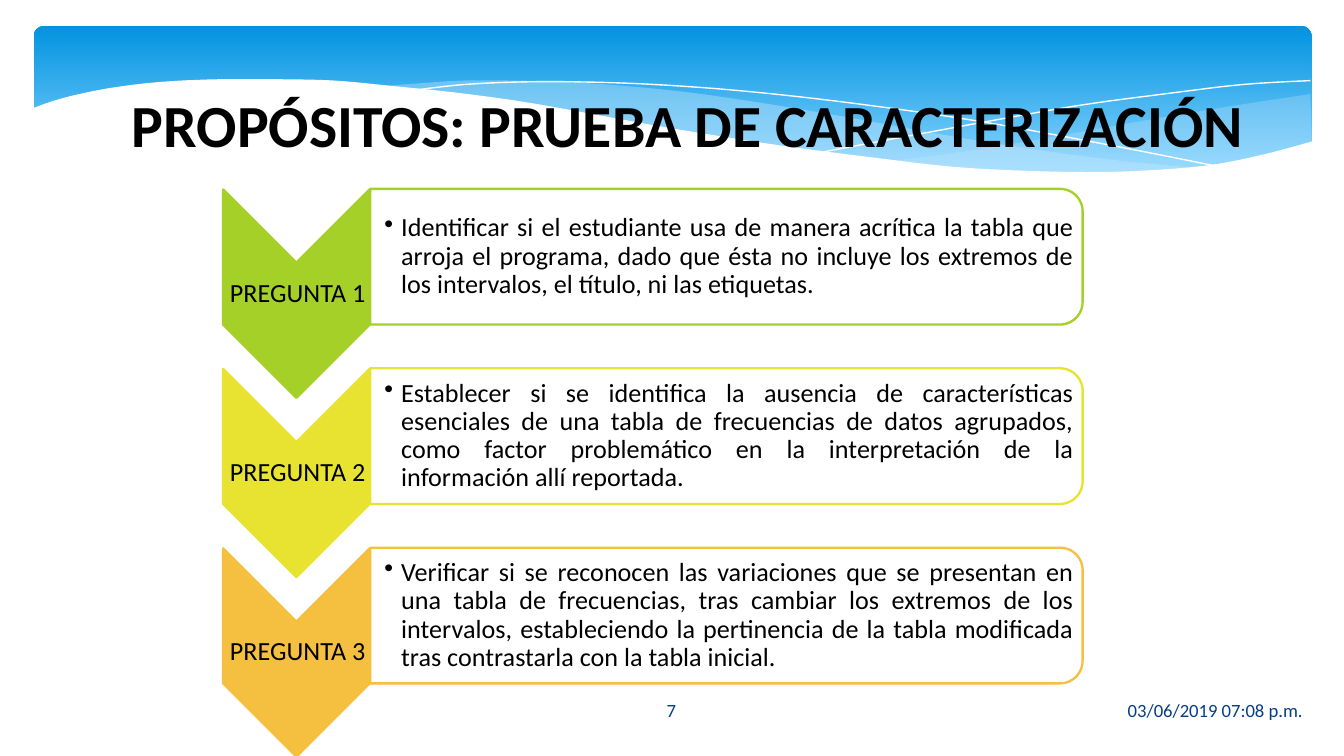
from dataclasses import dataclass
from typing import Optional

from lxml.etree import SubElement
from pptx import Presentation
from pptx.dml.color import RGBColor
from pptx.enum.shapes import MSO_SHAPE as Preset
from pptx.enum.text import MSO_ANCHOR as Anchor, MSO_AUTO_SIZE as AutoSize, PP_ALIGN as Align
from pptx.oxml.ns import qn
from pptx.util import Inches, Pt

WIDTH = Inches(10)
HEIGHT = WIDTH * 9 // 16
CELL = WIDTH // 1000  # the grid has 1000 columns of square cells
ROW_PITCH = 133.5
FONT = "Calibri"
COLORS = {
    "sky": "0293E0", "light sky": "83D3FE", "mist": "C6E7FC", "white": "FFFFFF",
    "black": "000000", "navy": "073E87",
    "green": "A5D028", "yellow": "E7E330", "orange": "F5C040",
}

Point = tuple[float, float]
Box = tuple[float, float, float, float]


@dataclass
class Wave:
    edges: list[list[Point]]
    fill: Optional[str] = None
    opacity: int = 100


@dataclass
class Question:
    label: str
    purpose: str
    color: str


WAVES = [
    Wave([[(975, 70), (935, 76), (891, 83), (861, 88), (805, 98), (729, 111), (661, 120)],
          [(661, 120), (705, 124), (757, 127), (803, 129), (844, 129), (881, 126),
           (921, 120), (949, 114), (976, 106)]], "mist", 29),
    Wave([[(893, 125), (837, 120), (775, 112), (706, 101), (629, 87), (569, 77), (514, 69),
           (465, 64), (420, 61), (380, 60), (344, 60), (313, 62), (286, 64)],
          [(286, 64), (342, 70), (404, 79), (449, 87), (530, 101), (601, 112), (665, 121),
           (722, 126), (773, 129), (818, 130), (857, 128), (893, 125)]], "mist", 40),
    Wave([[(309, 67), (344, 63), (387, 61), (433, 61), (489, 63), (556, 68), (636, 77),
           (727, 90), (831, 109), (907, 124)]]),
    Wave([[(613, 113), (672, 102), (748, 88), (806, 78), (866, 70), (924, 63), (975, 60)]]),
    Wave([[(977, 105), (940, 115), (899, 123), (850, 127), (809, 128), (761, 127), (708, 124),
           (648, 117), (579, 108), (503, 96), (447, 86), (391, 76), (340, 69), (292, 64),
           (250, 60), (211, 59), (161, 59), (119, 61), (85, 65), (59, 70), (40, 75), (23, 81)],
          [(23, 168), (977, 168)]], "white"),
]

QUESTIONS = [
    Question("PREGUNTA 1", "Identificar si el estudiante usa de manera acrítica la tabla que arroja "
             "el programa, dado que ésta no incluye los extremos de los intervalos, el título, "
             "ni las etiquetas.", "green"),
    Question("PREGUNTA 2", "Establecer si se identifica la ausencia de características esenciales de "
             "una tabla de frecuencias de datos agrupados, como factor problemático en la "
             "interpretación de la información allí reportada. ", "yellow"),
    Question("PREGUNTA 3", "Verificar si se reconocen las variaciones que se presentan en una tabla "
             "de frecuencias, tras cambiar los extremos de los intervalos, estableciendo la "
             "pertinencia de la tabla modificada tras contrastarla con la tabla inicial. ", "orange"),
]


def rgb(name: str) -> RGBColor:
    return RGBColor.from_string(COLORS[name])


def cells(*counts: float) -> list[int]:
    return [round(count * CELL) for count in counts]


def fill_solid(shape, color: str, opacity: int = 100) -> None:
    shape.fill.solid()
    shape.fill.fore_color.rgb = rgb(color)
    if opacity < 100:
        tint = shape.element.spPr.find(qn("a:solidFill"))[0]
        SubElement(tint, qn("a:alpha"), val=str(opacity * 1000))


def smooth_edge(knots: list[Point], steps: int = 6) -> list[Point]:
    """Catmull-Rom curve through the knots; an edge of two knots stays straight."""
    padded = [knots[0], *knots, knots[-1]]
    curve = [knots[0]]
    for a, b, c, d in zip(padded, padded[1:], padded[2:], padded[3:]):
        for step in range(1, steps + 1):
            t = step / steps
            curve.append(tuple(
                q + t * (r - p + t * (2 * p - 5 * q + 4 * r - s + t * (3 * (q - r) + s - p))) / 2
                if len(knots) > 2 else q + t * (r - q)
                for p, q, r, s in zip(a, b, c, d)))
    return curve


def draw_wave(shapes, wave: Wave) -> None:
    start, *rest = [tuple(cells(*point)) for edge in wave.edges for point in smooth_edge(edge)]
    builder = shapes.build_freeform(*start)
    builder.add_line_segments(rest, close=wave.fill is not None)
    shape = builder.convert_to_shape()
    shape.shadow.inherit = False
    if wave.fill:
        fill_solid(shape, wave.fill, wave.opacity)
        shape.line.fill.background()
    else:
        shape.fill.background()
        shape.line.color.rgb = rgb("white")
        shape.line.width = Pt(0)


def draw_banner(shapes) -> None:
    banner = shapes.add_shape(Preset.ROUNDED_RECTANGLE, *cells(25, 19, 951, 117))
    banner.adjustments[0] = 0.07
    banner.shadow.inherit = False
    banner.line.fill.background()
    banner.fill.gradient()
    banner.fill.gradient_angle = 270
    for stop, color, position in zip(banner.fill.gradient_stops, ("sky", "light sky"), (0, 0.9)):
        stop.color.rgb = rgb(color)
        stop.position = position


def add_run(paragraph, words: str, size: int, color: str, bold: bool = False) -> None:
    run = paragraph.add_run()
    run.text = words
    run.font.name = FONT
    run.font.size = Pt(size)
    run.font.bold = bold
    run.font.color.rgb = rgb(color)


def add_text(shapes, box: Box, words: str, size: int, color: str, align: Align,
             insets: Optional[Box] = None):
    frame = shapes.add_textbox(*cells(*box)).text_frame
    frame.word_wrap = True
    frame.vertical_anchor = Anchor.MIDDLE
    if insets:
        (frame.margin_left, frame.margin_top,
         frame.margin_right, frame.margin_bottom) = cells(*insets)
    paragraph = frame.paragraphs[0]
    paragraph.alignment = align
    add_run(paragraph, words, size, color)
    return paragraph


def draw_turned(shapes, preset: Preset, box: Box, fill: str, line: str, opacity: int = 100) -> None:
    """Preset shape turned a quarter clockwise; the box is the one before turning."""
    shape = shapes.add_shape(preset, *cells(*box))
    shape.rotation = 90
    shape.shadow.inherit = False
    fill_solid(shape, fill, opacity)
    shape.line.color.rgb = rgb(line)
    shape.line.width = Pt(1.25)


def draw_question(shapes, question: Question, row: int) -> None:
    top = row * ROW_PITCH
    draw_turned(shapes, Preset.CHEVRON, (143, 164 + top, 155, 109), question.color, question.color)
    label = add_text(shapes, (167, 195 + top, 109, 47), question.label, 14, "black",
                     Align.CENTER, (1, 1, 1, 1))
    label.line_spacing = 0.9
    draw_turned(shapes, Preset.ROUND_2_SAME_RECTANGLE, (490, -74 + top, 101, 530),
                "white", question.color, 90)
    purpose = add_text(shapes, (275, 145.5 + top, 525, 91), question.purpose, 14, "black",
                       Align.JUSTIFY, (11, 1, 1, 1))
    purpose.level = 1
    purpose.line_spacing = 0.9
    properties = purpose._p.get_or_add_pPr()
    indent = cells(12.5)[0]
    properties.set("marL", str(indent))
    properties.set("indent", str(-indent))
    SubElement(properties, qn("a:buChar"), char="•")


def place_title(slide, words: str) -> None:
    title = slide.shapes.title
    title.left, title.top, title.width, title.height = cells(50, 60, 934, 94)
    frame = title.text_frame
    frame.word_wrap = True
    frame.auto_size = AutoSize.NONE
    frame.vertical_anchor = Anchor.TOP
    frame.paragraphs[0].alignment = Align.CENTER
    add_run(frame.paragraphs[0], words, 32, "black", bold=True)
    title.element.getparent().append(title.element)  # in front of the waves


def main() -> None:
    deck = Presentation()
    deck.slide_width, deck.slide_height = WIDTH, HEIGHT
    slide = deck.slides.add_slide(deck.slide_layouts[5])
    shapes = slide.shapes
    draw_banner(shapes)
    for wave in WAVES:
        draw_wave(shapes, wave)
    add_text(shapes, (565, 513, 414, 30), "03/06/2019 07:08 p.m.", 10, "navy", Align.RIGHT)
    add_text(shapes, (436, 513, 127, 30), "7", 10, "navy", Align.CENTER)
    place_title(slide, "PROPÓSITOS: PRUEBA DE CARACTERIZACIÓN ")
    for row, question in enumerate(QUESTIONS):
        draw_question(shapes, question, row)
    deck.save("out.pptx")


if __name__ == "__main__":
    main()
